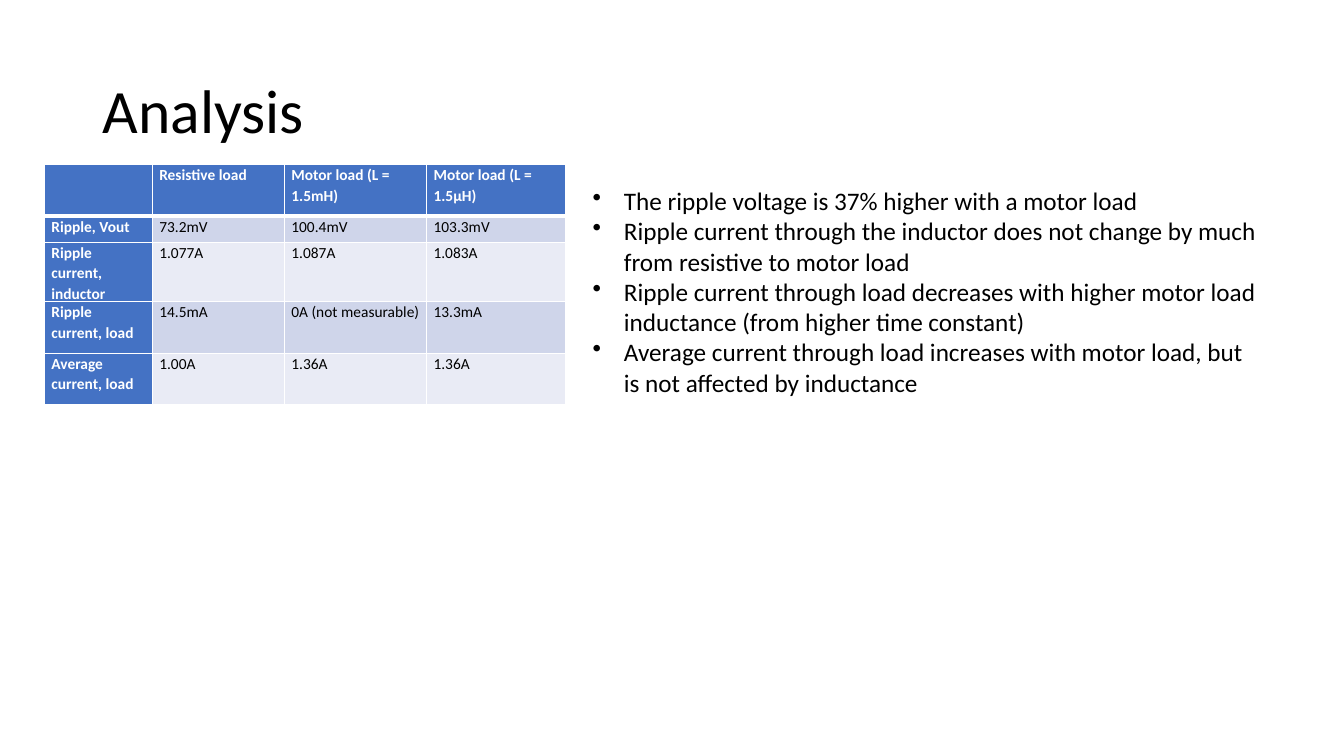
import pptx
import pptx.dml.color
import pptx.enum.text
import pptx.oxml
import pptx.oxml.ns
import pptx.util
from lxml import etree

# Lengths are percentages of the slide's width (x) and height (y)
SLIDE_WIDTH = pptx.util.Inches(13.33)
SLIDE_HEIGHT = pptx.util.Inches(7.5)
FONT = "Calibri"
BLACK, WHITE, BLUE = "000000", "FFFFFF", "4472C4"
BANDS = ["CFD5EA", "E9EBF5"]

COLUMN_WIDTHS = [8.03, 9.83, 10.58, 10.35]
ROW_HEIGHTS = [6.8, 3.47, 6.8, 6.8, 6.8]
MEASUREMENTS = [
    ["", "Resistive load", "Motor load (L = 1.5mH)", "Motor load (L = 1.5µH)"],
    ["Ripple, Vout", "73.2mV", "100.4mV", "103.3mV"],
    ["Ripple current, inductor", "1.077A", "1.087A", "1.083A"],
    ["Ripple current, load", "14.5mA", "0A (not measurable)", "13.3mA"],
    ["Average current, load", "1.00A", "1.36A", "1.36A"],
]
FINDINGS = [
    "The ripple voltage is 37% higher with a motor load",
    "Ripple current through the inductor does not change by much from resistive to motor load",
    "Ripple current through load decreases with higher motor load inductance "
    "(from higher time constant)",
    "Average current through load increases with motor load, but is not affected by inductance",
]


def across(share):
    return round(SLIDE_WIDTH * share / 100)


def down(share):
    return round(SLIDE_HEIGHT * share / 100)


def color(value):
    return pptx.dml.color.RGBColor.from_string(value)


def style_paragraph(para, size, ink, bold=False, spacing=1.0):
    para.line_spacing = spacing
    para.font.name = FONT
    para.font.size = pptx.util.Pt(size)
    para.font.bold = bold
    para.font.color.rgb = color(ink)


def add_text(page, left, top, width, height, lines, size, spacing=1.0):
    box = page.shapes.add_textbox(across(left), down(top), across(width), down(height))
    frame = box.text_frame
    frame.word_wrap = True
    frame.text = "\n".join(lines)
    for para in frame.paragraphs:
        style_paragraph(para, size, BLACK, spacing=spacing)
    return frame


def add_bullet(para, indent):
    properties = para._p.get_or_add_pPr()
    properties.set("marL", str(indent))
    properties.set("indent", str(-indent))
    bullet = etree.Element(pptx.oxml.ns.qn("a:buChar"), char="•")
    # The bullet comes before the default run properties
    properties.find(pptx.oxml.ns.qn("a:defRPr")).addprevious(bullet)


def add_borders(cell, top, bottom):
    properties = cell._tc.get_or_add_tcPr()
    widths = {"lnL": 1, "lnR": 1, "lnT": top, "lnB": bottom}
    for position, (side, width) in enumerate(widths.items()):
        properties.insert(position, pptx.oxml.parse_xml(
            f'<a:{side} {pptx.oxml.ns.nsdecls("a")} w="{pptx.util.Pt(width)}">'
            f'<a:solidFill><a:srgbClr val="{WHITE}"/></a:solidFill></a:{side}>'))


def fill_cell(cell, text, row, column):
    heading = row == 0 or column == 0
    cell.fill.solid()
    cell.fill.fore_color.rgb = color(BLUE if heading else BANDS[(row - 1) % 2])
    cell.margin_left = cell.margin_right = pptx.util.Inches(0.07)
    cell.margin_top = cell.margin_bottom = 0
    cell.text = text
    style_paragraph(cell.text_frame.paragraphs[0], 11,
                    WHITE if heading else BLACK, heading, 1.07)
    # A thick rule separates the header from the body
    add_borders(cell, 3 if row == 1 else 1, 3 if row == 0 else 1)


def add_measurements(page, left, top):
    table = page.shapes.add_table(
        len(ROW_HEIGHTS), len(COLUMN_WIDTHS), across(left), down(top),
        across(sum(COLUMN_WIDTHS)), down(sum(ROW_HEIGHTS))).table
    for column, width in zip(table.columns, COLUMN_WIDTHS):
        column.width = across(width)
    for row, height in zip(table.rows, ROW_HEIGHTS):
        row.height = down(height)
    for row, texts in enumerate(MEASUREMENTS):
        for column, text in enumerate(texts):
            fill_cell(table.cell(row, column), text, row, column)


def main():
    deck = pptx.Presentation()
    deck.slide_width, deck.slide_height = SLIDE_WIDTH, SLIDE_HEIGHT
    page = deck.slides.add_slide(deck.slide_layouts[6])

    # Title
    title = add_text(page, 6.9, 5.33, 86.25, 19.33, ["Analysis"], 44, 0.9)
    title.vertical_anchor = pptx.enum.text.MSO_ANCHOR.MIDDLE

    # Table of measurements
    add_measurements(page, 3.3, 21.8)

    # Findings
    findings = add_text(page, 43.36, 23.87, 51.3, 29.6, FINDINGS, 18)
    findings.auto_size = pptx.enum.text.MSO_AUTO_SIZE.SHAPE_TO_FIT_TEXT
    for para in findings.paragraphs:
        add_bullet(para, pptx.util.Inches(0.31))

    deck.save("out.pptx")


if __name__ == "__main__":
    main()
